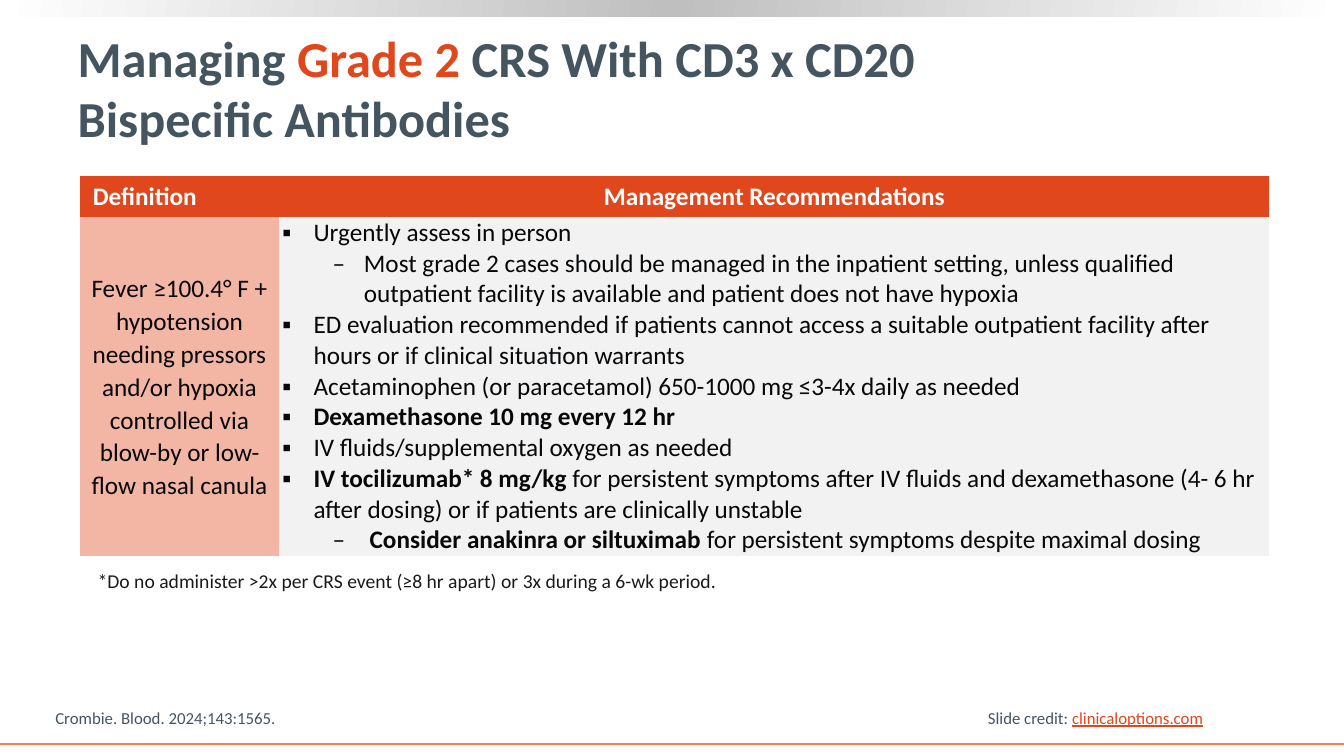
from copy import deepcopy
from dataclasses import dataclass

from lxml.etree import SubElement
from pptx import Presentation
from pptx.dml.color import RGBColor as RGB
from pptx.enum.shapes import MSO_CONNECTOR as Connector, MSO_SHAPE as Shape
from pptx.enum.text import MSO_ANCHOR as Anchor, MSO_AUTO_SIZE as AutoSize, PP_ALIGN as Align
from pptx.oxml.ns import qn
from pptx.util import Inches, Pt


@dataclass(frozen=True)
class Theme:
    font: str = "Calibri"
    slate: RGB = RGB.from_string("455560")
    orange: RGB = RGB.from_string("E1471D")
    rule: RGB = RGB.from_string("F47D55")
    salmon: RGB = RGB.from_string("F3B5A4")
    pale: RGB = RGB.from_string("F2F2F2")
    ink: RGB = RGB.from_string("07080A")
    note: RGB = RGB.from_string("1A1A1A")
    silver: RGB = RGB.from_string("BFBFBF")
    white: RGB = RGB.from_string("FFFFFF")
    title_size: int = 36
    table_size: int = 18
    note_size: int = 14
    footer_size: int = 12


THEME = Theme()

# Title lines, each a list of (words, highlighted)
TITLE = [
    [("Managing ", False), ("Grade 2", True), (" CRS With CD3 x CD20 ", False)],
    [("Bispecific Antibodies", False)],
]
HEADINGS = [("Definition", Align.LEFT), ("Management Recommendations", Align.CENTER)]
DEFINITION = ("Fever ≥100.4° F + hypotension needing pressors and/or hypoxia "
              "controlled via blow-by or low-flow nasal canula")
# (level, bold opening, remaining words)
RECOMMENDATIONS = [
    (0, "", "Urgently assess in person"),
    (1, "", "Most grade 2 cases should be managed in the inpatient setting, unless "
            "qualified outpatient facility is available and patient does not have hypoxia"),
    (0, "", "ED evaluation recommended if patients cannot access a suitable outpatient "
            "facility after hours or if clinical situation warrants"),
    (0, "", "Acetaminophen (or paracetamol) 650-1000 mg ≤3-4x daily as needed"),
    (0, "Dexamethasone 10 mg every 12 hr", ""),
    (0, "", "IV fluids/supplemental oxygen as needed"),
    (0, "IV tocilizumab* 8 mg/kg ", "for persistent symptoms after IV fluids and "
        "dexamethasone (4- 6 hr after dosing) or if patients are clinically unstable"),
    (1, " Consider anakinra or siltuximab ", "for persistent symptoms despite maximal dosing"),
]
FOOTNOTE = "*Do no administer >2x per CRS event (≥8 hr apart) or 3x during a 6-wk period."
CITATION = "Crombie. Blood. 2024;143:1565."
CREDIT = ("Slide credit: ", "clinicaloptions.com")

SLIDE_WIDTH, SLIDE_HEIGHT = 13.33, 7.5
TABLE_LEFT, TABLE_TOP = 0.79, 1.75
COLUMNS, ROWS = (1.98, 9.82), (0.4, 3.35)
BULLETS = {0: ("▪", 0.31), 1: ("–", 0.81)}
HANGING = 0.31
PLAIN_TABLE_STYLE = "{2D5ABB26-0587-4C30-8999-92F81FD0307C}"


def add_words(paragraph, words, size, color, bold=False, underline=None):
    run = paragraph.add_run()
    run.text = words
    font = run.font
    font.name, font.size, font.bold, font.underline = THEME.font, Pt(size), bold, underline
    font.color.rgb = color


def add_bullet(paragraph, level):
    mark, indent = BULLETS[level]
    paragraph.level = level
    properties = paragraph._p.get_or_add_pPr()
    properties.set("marL", str(Inches(indent)))
    properties.set("indent", str(-Inches(HANGING)))
    SubElement(properties, qn("a:buFont")).set("typeface", THEME.font)
    SubElement(properties, qn("a:buChar")).set("char", mark)


def add_line_of_text(slide, left, top, width, height, wrap=True):
    """Add an empty text box and return its paragraph."""
    frame = slide.shapes.add_textbox(*map(Inches, (left, top, width, height))).text_frame
    frame.word_wrap = wrap
    return frame.paragraphs[0]


def add_edges(slide):
    """Add the shaded bar at the top and the thin rule at the bottom."""
    bar = slide.shapes.add_shape(Shape.RECTANGLE, 0, 0, Inches(SLIDE_WIDTH), Inches(0.16))
    bar.shadow.inherit = False
    bar.line.fill.background()
    bar.fill.gradient()
    bar.fill.gradient_angle = 170
    first = bar.fill.gradient_stops[0]._gs
    first.addnext(deepcopy(first))
    shades = ((0, THEME.white), (0.5, THEME.silver), (1, THEME.white))
    for stop, (position, color) in zip(bar.fill.gradient_stops, shades):
        stop.position, stop.color.rgb = position, color

    rule_y = Inches(7.38)
    rule = slide.shapes.add_connector(Connector.STRAIGHT, 0, rule_y, Inches(SLIDE_WIDTH), rule_y)
    rule.line.color.rgb, rule.line.width = THEME.rule, Pt(1.5)
    SubElement(rule._element.spPr, qn("a:effectLst"))


def fill_title(title):
    title.left, title.top, title.width, title.height = map(Inches, (0.67, 0.26, 11.89, 1.21))
    frame = title.text_frame
    frame.auto_size, frame.vertical_anchor, frame.word_wrap = AutoSize.NONE, Anchor.MIDDLE, True
    heading = frame.paragraphs[0]
    heading.alignment = Align.LEFT
    for number, line in enumerate(TITLE):
        if number:
            heading.add_line_break()
        for words, highlighted in line:
            color = THEME.orange if highlighted else THEME.slate
            add_words(heading, words, THEME.title_size, color, bold=True)


def style_cell(cell, color, side, edge):
    cell.fill.solid()
    cell.fill.fore_color.rgb = color
    cell.vertical_anchor = Anchor.MIDDLE
    cell.margin_left = cell.margin_right = Inches(side)
    cell.margin_top = cell.margin_bottom = Inches(edge)
    return cell.text_frame


def add_management_table(slide):
    table = slide.shapes.add_table(
        len(ROWS), len(COLUMNS), Inches(TABLE_LEFT), Inches(TABLE_TOP),
        Inches(sum(COLUMNS)), Inches(sum(ROWS))).table
    table.first_row = table.horz_banding = False
    table._tbl.tblPr.find(qn("a:tableStyleId")).text = PLAIN_TABLE_STYLE
    for column, width in zip(table.columns, COLUMNS):
        column.width = Inches(width)
    for row, height in zip(table.rows, ROWS):
        row.height = Inches(height)

    for column, (words, alignment) in enumerate(HEADINGS):
        heading = style_cell(table.cell(0, column), THEME.orange, 0.13, 0.05).paragraphs[0]
        heading.alignment = alignment
        add_words(heading, words, THEME.table_size, THEME.white, bold=True)

    definition = style_cell(table.cell(1, 0), THEME.salmon, 0.03, 0).paragraphs[0]
    definition.alignment, definition.line_spacing = Align.CENTER, 1.07
    add_words(definition, DEFINITION, THEME.table_size, THEME.ink)

    advice = style_cell(table.cell(1, 1), THEME.pale, 0.03, 0)
    for number, (level, opening, rest) in enumerate(RECOMMENDATIONS):
        item = advice.add_paragraph() if number else advice.paragraphs[0]
        add_bullet(item, level)
        for words, bold in ((opening, True), (rest, False)):
            if words:
                add_words(item, words, THEME.table_size, THEME.ink, bold)


def main():
    deck = Presentation()
    deck.slide_width, deck.slide_height = Inches(SLIDE_WIDTH), Inches(SLIDE_HEIGHT)
    slide = deck.slides.add_slide(deck.slide_layouts[5])
    add_edges(slide)
    fill_title(slide.shapes.title)
    add_management_table(slide)

    footnote = add_line_of_text(slide, 0.87, 5.59, 11.6, 0.34)
    add_words(footnote, FOOTNOTE, THEME.note_size, THEME.note)
    citation = add_line_of_text(slide, 0.45, 6.97, 8.59, 0.3)
    add_words(citation, CITATION, THEME.footer_size, THEME.slate)
    credit = add_line_of_text(slide, 9.7, 6.97, 2.36, 0.3, wrap=False)
    label, site = CREDIT
    add_words(credit, label, THEME.footer_size, THEME.slate)
    add_words(credit, site, THEME.footer_size, THEME.orange, underline=True)
    deck.save("out.pptx")


if __name__ == "__main__":
    main()
